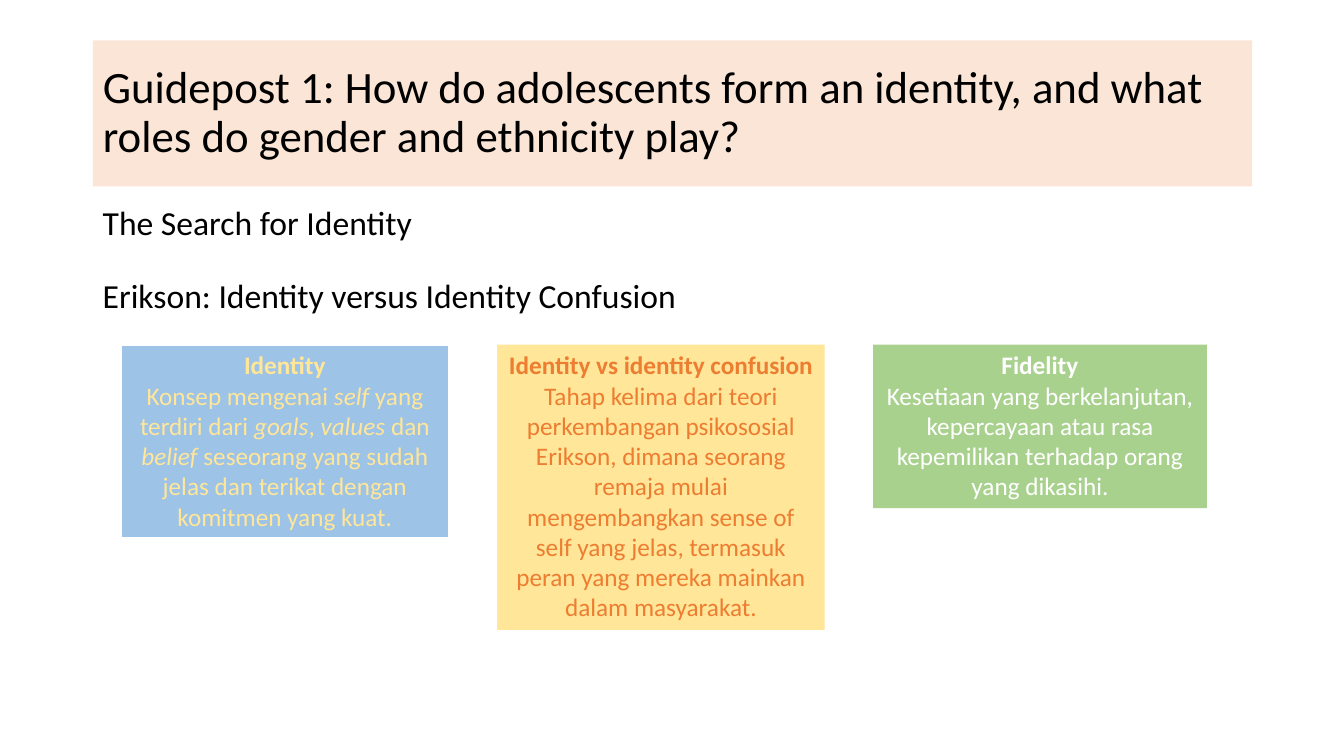
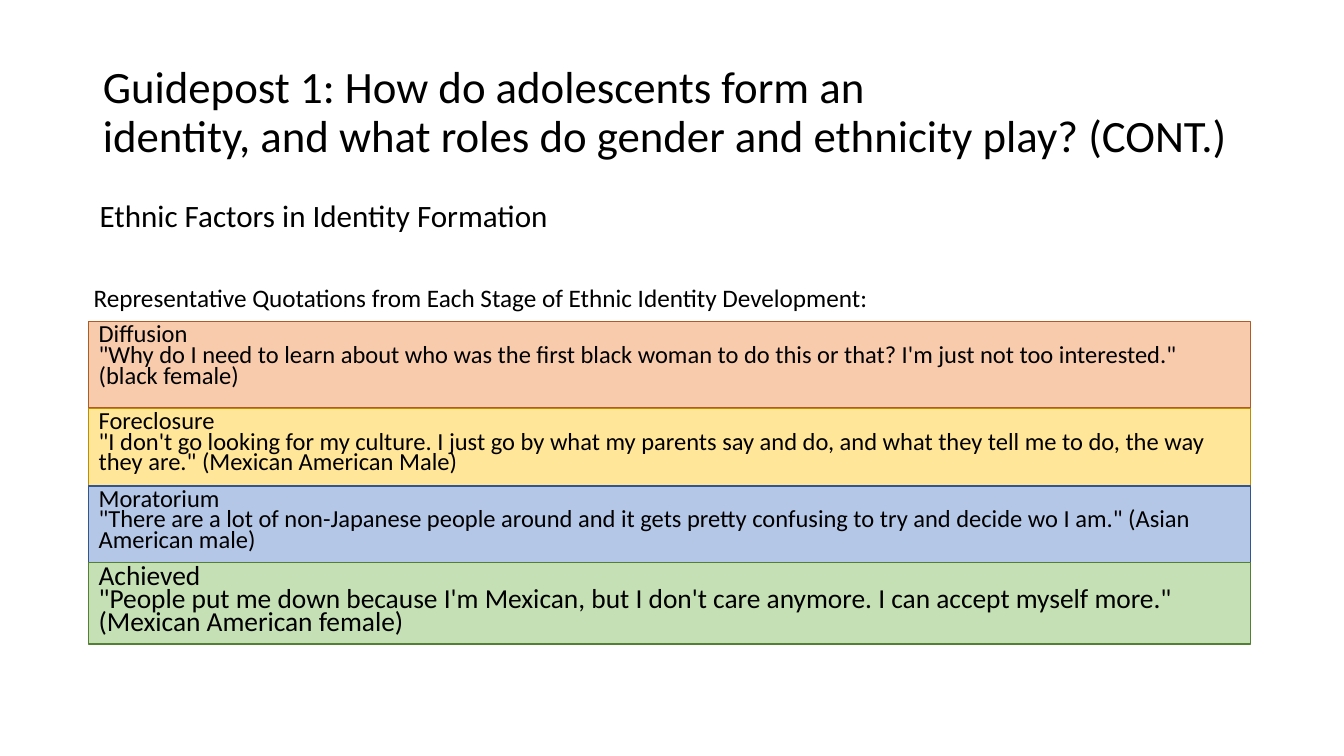
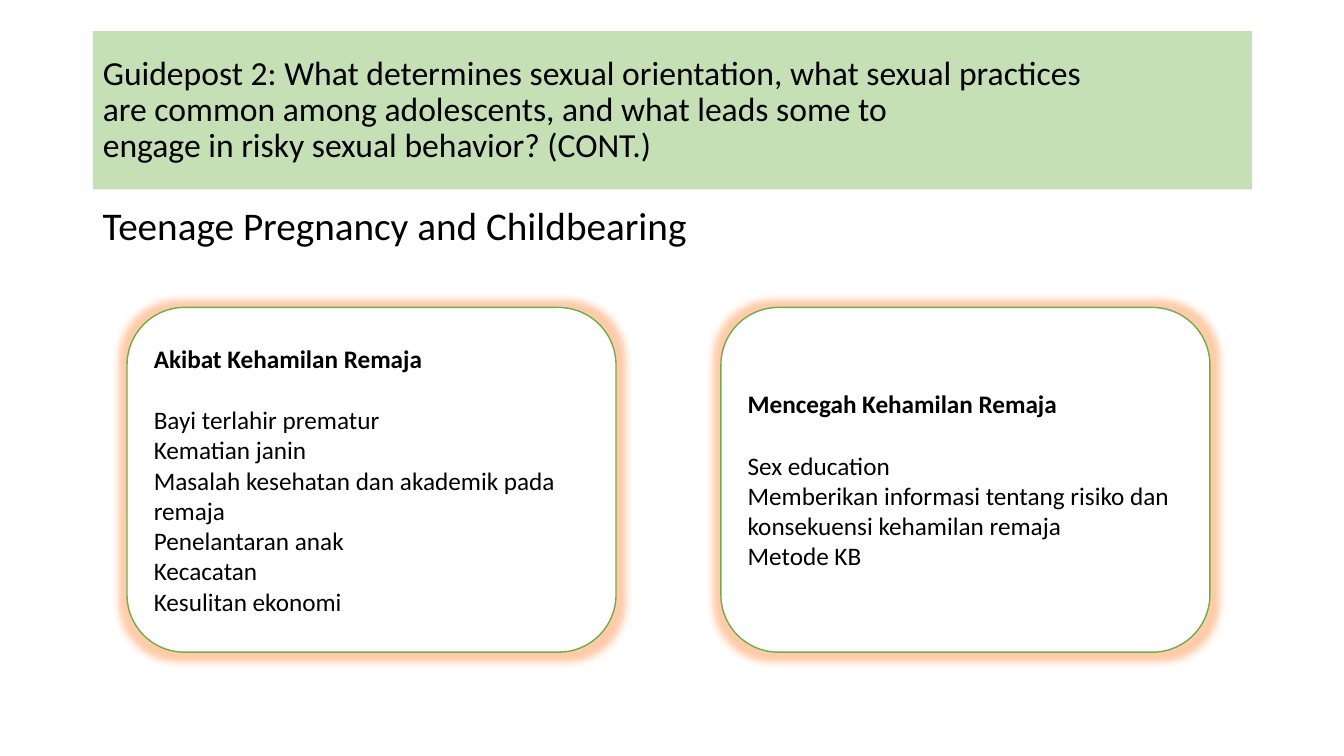
from dataclasses import dataclass
from typing import Optional

import lxml.etree
import pptx
import pptx.dml.color
import pptx.enum.shapes
import pptx.enum.text
import pptx.oxml.ns
import pptx.util

Inches = pptx.util.Inches
Pt = pptx.util.Pt
Align = pptx.enum.text.PP_ALIGN
Anchor = pptx.enum.text.MSO_ANCHOR
Shape = pptx.enum.shapes.MSO_SHAPE
qn = pptx.oxml.ns.qn


@dataclass(frozen=True)
class Theme:
    font: str = "Calibri"
    black: str = "000000"
    white: str = "FFFFFF"
    peach: str = "FBE5D6"
    blue: str = "9DC3E6"
    yellow: str = "FFE699"
    orange: str = "ED7D31"
    green: str = "A9D18E"
    light_green: str = "C5E0B4"
    card_line: str = "70AD47"
    glow: str = "FF7D26"
    title: float = 32
    long_title: float = 24
    heading: float = 28
    subheading: float = 24
    small_heading: float = 22.2
    body: float = 18
    quote: float = 17.5
    large_quote: float = 19.6


T = Theme()


@dataclass(frozen=True)
class Style:
    """Text format of one block."""
    size: float = T.body
    color: str = T.black
    align: Align = Align.LEFT
    anchor: Anchor = Anchor.TOP
    spacing: float = 1.0
    gap: float = 0  # points after the first paragraph
    bold_first: bool = False


@dataclass(frozen=True)
class Box:
    left: float
    top: float
    width: float
    height: float


@dataclass(frozen=True)
class Definition:
    term: str
    meaning: str
    width: float
    height: float
    fill: str
    color: str
    line: Optional[str] = None


@dataclass(frozen=True)
class Stage:
    name: str
    quote: str
    height: float
    fill: str
    line: str
    size: float = T.quote


@dataclass(frozen=True)
class Card:
    heading: str
    points: tuple[str, ...]


def rgb(color: str) -> pptx.dml.color.RGBColor:
    return pptx.dml.color.RGBColor.from_string(color)


def lengths(box: Box) -> tuple:
    return tuple(Inches(v) for v in (box.left, box.top, box.width, box.height))


def write(tf, paragraphs: list[str], style: Style) -> None:
    """Fill a text frame; *stars* mark italics, newlines are line breaks."""
    tf.word_wrap = True
    tf.auto_size = pptx.enum.text.MSO_AUTO_SIZE.NONE
    tf.vertical_anchor = style.anchor
    for i, text in enumerate(paragraphs):
        p = tf.add_paragraph() if i else tf.paragraphs[0]
        p.alignment = style.align
        p.line_spacing = style.spacing
        p.space_before = Pt(0)
        p.space_after = Pt(0 if i else style.gap)
        for j, chunk in enumerate(text.split("*")):
            for k, line in enumerate(chunk.split("\n")):
                if k:
                    p.add_line_break()
                r = p.add_run()
                r.text = line
                r.font.name = T.font
                r.font.size = Pt(style.size)
                r.font.color.rgb = rgb(style.color)
                r.font.bold = style.bold_first and i == 0
                r.font.italic = j % 2 == 1
        # Line breaks take the size of the text around them
        for br in p._p.findall(qn("a:br")):
            lxml.etree.SubElement(br, qn("a:rPr"), sz=str(int(style.size * 100)))


def add_title_slide(prs, title: str, box: Box, size: float, fill: Optional[str] = None):
    s = prs.slides.add_slide(prs.slide_layouts[5])
    sp = s.shapes.title
    sp.left, sp.top, sp.width, sp.height = lengths(box)
    if fill:
        sp.fill.solid()
        sp.fill.fore_color.rgb = rgb(fill)
    write(sp.text_frame, [title], Style(size, anchor=Anchor.MIDDLE, spacing=0.9))
    return s


def add_text(s, box: Box, paragraphs: list[str], style: Style) -> None:
    write(s.shapes.add_textbox(*lengths(box)).text_frame, paragraphs, style)


def add_panel(s, kind: Shape, box: Box, fill: str, line: Optional[str], line_width: float,
              paragraphs: list[str], style: Style):
    sp = s.shapes.add_shape(kind, *lengths(box))
    sp.shadow.inherit = False
    sp.fill.solid()
    sp.fill.fore_color.rgb = rgb(fill)
    if line:
        sp.line.color.rgb = rgb(line)
        sp.line.width = Pt(line_width)
    else:
        sp.line.fill.background()
    write(sp.text_frame, paragraphs, style)
    return sp


def add_glow(sp, color: str, radius: float, opacity: int) -> None:
    effects = sp._element.spPr.find(qn("a:effectLst"))
    glow = lxml.etree.SubElement(effects, qn("a:glow"), rad=str(Pt(radius)))
    clr = lxml.etree.SubElement(glow, qn("a:srgbClr"), val=color)
    lxml.etree.SubElement(clr, qn("a:alpha"), val=str(opacity * 1000))


TITLE_BOX = Box(0.92, 0.4, 11.5, 1.45)

DEFINITIONS = [
    Definition("Identity",
               "Konsep mengenai *self* yang terdiri dari *goals*, *values* dan *belief* "
               "seseorang yang sudah jelas dan terikat dengan komitmen yang kuat.",
               3.25, 1.92, T.blue, T.yellow, T.white),
    Definition("Identity vs identity confusion",
               "Tahap kelima dari teori\nperkembangan psikososial\nErikson, dimana seorang\n"
               "remaja mulai\nmengembangkan sense of\nself yang jelas, termasuk\n"
               "peran yang mereka mainkan\ndalam masyarakat.",
               3.25, 2.83, T.yellow, T.orange),
    Definition("Fidelity",
               "Kesetiaan yang berkelanjutan, kepercayaan atau rasa kepemilikan "
               "terhadap orang yang dikasihi.",
               3.31, 1.62, T.green, T.white),
]

STAGES = [
    Stage("Diffusion",
          '"Why do I need to learn about who was the first black woman to do this or that? '
          'I\'m just not too interested." (black female)',
          0.86, "F8CBAD", "AF5C24"),
    Stage("Foreclosure",
          '"I don\'t go looking for my culture. I just go by what my parents say and do, '
          'and what they tell me to do, the way they are." (Mexican American Male)',
          0.77, T.yellow, "BD8E00"),
    Stage("Moratorium",
          '"There are a lot of non-Japanese people around and it gets pretty confusing '
          'to try and decide wo I am." (Asian American male)',
          0.76, "B4C7E7", "325491"),
    Stage("Achieved",
          '"People put me down because I\'m Mexican, but I don\'t care anymore. '
          'I can accept myself more." (Mexican American female)',
          0.81, T.light_green, "538035", T.large_quote),
]

CARDS = [
    Card("Akibat Kehamilan Remaja",
         ("Bayi terlahir prematur", "Kematian janin",
          "Masalah kesehatan dan akademik pada remaja",
          "Penelantaran anak", "Kecacatan", "Kesulitan ekonomi")),
    Card("Mencegah Kehamilan Remaja",
         ("Sex education",
          "Memberikan informasi tentang risiko dan konsekuensi kehamilan remaja",
          "Metode KB")),
]


def identity_slide(prs) -> None:
    s = add_title_slide(prs, "Guidepost 1: How do adolescents form an identity, and what "
                        "roles do gender and ethnicity play?", TITLE_BOX, T.title, T.peach)
    add_text(s, Box(0.92, 2, 11.5, 1.3),
             ["The Search for Identity", "Erikson: Identity versus Identity Confusion"],
             Style(T.subheading, spacing=0.9, gap=26))
    for i, d in enumerate(DEFINITIONS):
        add_panel(s, Shape.RECTANGLE, Box(1.2 + i * 3.73, 3.42, d.width, d.height),
                  d.fill, d.line, 1.5, [d.term, d.meaning],
                  Style(color=d.color, align=Align.CENTER, bold_first=True))


def ethnic_slide(prs) -> None:
    s = add_title_slide(prs, "Guidepost 1: How do adolescents form an\nidentity, and what "
                        "roles do gender and ethnicity play? (CONT.)", TITLE_BOX, T.title)
    add_text(s, Box(0.89, 2, 11.5, 0.7), ["Ethnic Factors in Identity Formation"],
             Style(T.small_heading, spacing=0.7))
    # Stages stacked edge to edge
    top = 3.19
    for st in STAGES:
        add_panel(s, Shape.RECTANGLE, Box(0.88, top, 11.52, st.height), st.fill, st.line, 1,
                  [st.name, st.quote], Style(st.size, spacing=0.7))
        top += st.height
    add_text(s, Box(0.83, 2.75, 11.57, 0.4),
             ["Representative Quotations from Each Stage of Ethnic Identity Development:"],
             Style())


def pregnancy_slide(prs) -> None:
    s = add_title_slide(prs, "Guidepost 2: What determines sexual orientation, what sexual "
                        "practices\nare common among adolescents, and what leads some to\n"
                        "engage in risky sexual behavior? (CONT.)",
                        Box(0.92, 0.31, 11.5, 1.57), T.long_title, T.light_green)
    add_text(s, Box(0.92, 2, 11.5, 0.7), ["Teenage Pregnancy and Childbearing"],
             Style(T.heading, spacing=0.9))
    for i, card in enumerate(CARDS):
        sp = add_panel(s, Shape.ROUNDED_RECTANGLE, Box(1.26 + i * 5.89, 3.05, 4.85, 3.42),
                       T.white, T.card_line, 1, [card.heading, *card.points],
                       Style(anchor=Anchor.MIDDLE, gap=22, bold_first=True))
        add_glow(sp, T.glow, radius=11, opacity=40)


def main() -> None:
    prs = pptx.Presentation()
    prs.slide_width, prs.slide_height = Inches(13.33), Inches(7.5)
    identity_slide(prs)
    ethnic_slide(prs)
    pregnancy_slide(prs)
    prs.save("out.pptx")


if __name__ == "__main__":
    main()
